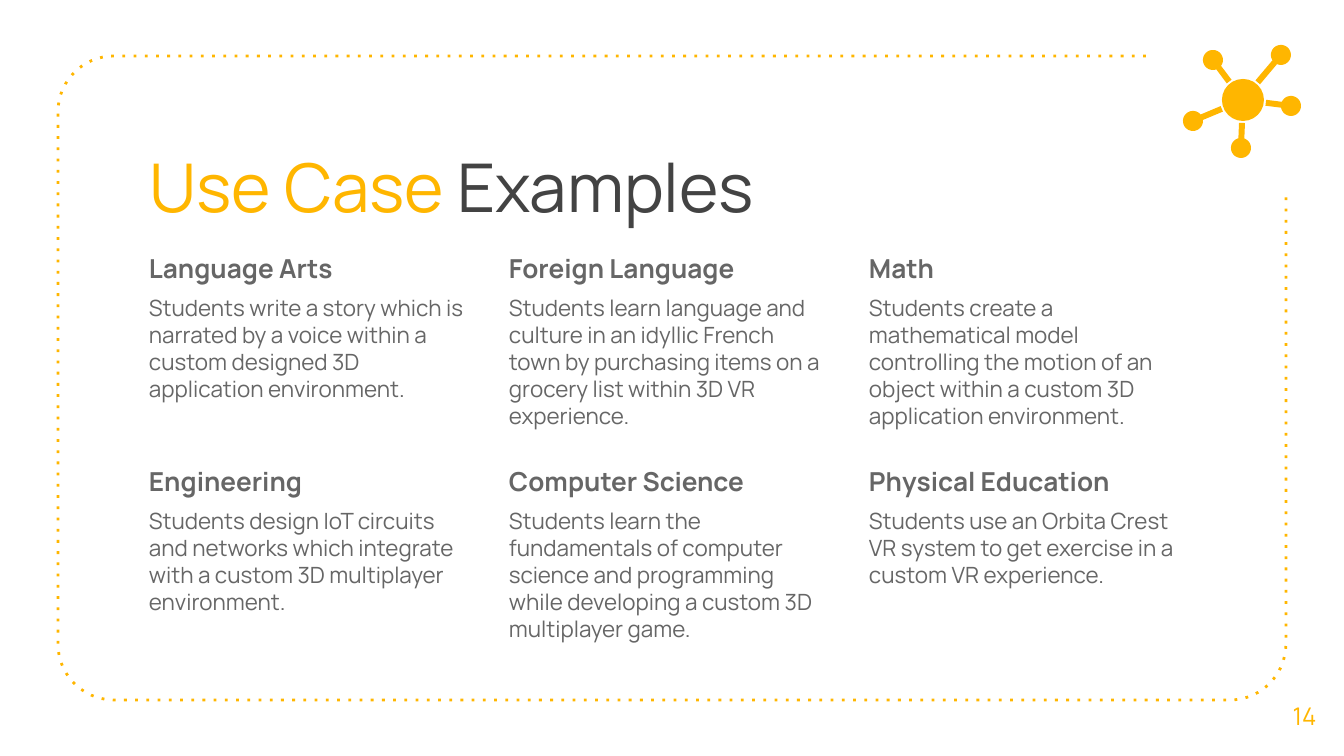
from math import atan2, cos, pi, radians, sin

from pptx import Presentation
from pptx.dml.color import RGBColor
from pptx.enum.dml import MSO_LINE
from pptx.enum.shapes import MSO_SHAPE
from pptx.enum.text import MSO_ANCHOR, MSO_AUTO_SIZE, PP_ALIGN
from pptx.oxml.ns import qn
from pptx.util import Pt

TOP, MID = MSO_ANCHOR.TOP, MSO_ANCHOR.MIDDLE
LEFT, CENTER = PP_ALIGN.LEFT, PP_ALIGN.CENTER
OVAL, DOT, FIXED = MSO_SHAPE.OVAL, MSO_LINE.ROUND_DOT, MSO_AUTO_SIZE.NONE
PX = 914400 / 134.4
GOLD, DARK, GRAY = "FFB600", "434343", "666666"


def color(fmt, code):
    fmt.rgb = RGBColor.from_string(code)


def write(box, paras, anchor=TOP, align=LEFT):
    """Each paragraph is a list of runs: (text, size, color, bold)."""
    frame = box.text_frame
    pad = round(13 * PX)
    form = dict(word_wrap=True, auto_size=FIXED, vertical_anchor=anchor,
                margin_left=pad, margin_right=pad,
                margin_top=pad, margin_bottom=pad)
    for key, val in form.items():
        setattr(frame, key, val)
    for i, runs in enumerate(paras):
        para = frame.add_paragraph() if i else frame.paragraphs[0]
        para.alignment = align
        para.space_before = Pt(6 if i else 0)
        for text, size, code, bold in runs:
            run = para.add_run()
            run.text = text
            for key, val in dict(name="Manrope", size=Pt(size), bold=bold).items():
                setattr(run.font, key, val)
            color(run.font.color, code)


prs = Presentation()
prs.slide_width, prs.slide_height = round(1344 * PX), round(756 * PX)
slide = prs.slides.add_slide(prs.slide_layouts[5])
shapes = slide.shapes

# Dotted frame, open at the top right corner
rad = 56
edge = [(1146, 56)]
for x, y, start in ((114, 112, 270), (114, 644, 180), (1230, 644, 90)):
    for turn in range(0, 91, 6):
        ang = radians(start - turn)
        edge.append((x + rad * cos(ang), y + rad * sin(ang)))
edge.append((1286, 196))
pts = [(x * PX, y * PX) for x, y in edge]
pen = shapes.build_freeform(*pts[0])
pen.add_line_segments(pts[1:], close=False)
border = pen.convert_to_shape()
border.shadow.inherit = False
border.fill.background()
color(border.line.color, GOLD) if border.line.fill.solid() else None
color(border.line.color, GOLD)
border.line.width = Pt(1.5)
border.line.dash_style = DOT
border._element.find(".//" + qn("a:prstDash")).set("val", "dot")

# Title
title = shapes.title
spot = dict(left=136, top=132, width=1009, height=126)
for key, val in spot.items():
    setattr(title, key, round(val * PX))
write(title, [[("Use Case", 36, GOLD, False), (" Examples", 36, DARK, False)]])

# Use cases, three to a row
cases = [
    ("Language Arts", "Students write a story which is narrated by a voice "
     "within a custom designed 3D application environment."),
    ("Foreign Language", "Students learn language and culture in an idyllic French "
     "town by purchasing items on a grocery list within 3D VR experience."),
    ("Math", "Students create a mathematical model controlling the motion of an "
     "object within a custom 3D application environment."),
    ("Engineering", "Students design IoT circuits and networks which integrate "
     "with a custom 3D multiplayer environment."),
    ("Computer Science", "Students learn the fundamentals of computer science and "
     "programming while developing a custom 3D multiplayer game."),
    ("Physical Education", "Students use an Orbita Crest VR system to get exercise "
     "in a custom VR experience."),
]
for i, (head, body) in enumerate(cases):
    row, col = divmod(i, 3)
    area = (136 + 360 * col, 239 + 213 * row, 343, 218)
    box = shapes.add_textbox(*[round(n * PX) for n in area])
    write(box, [[(head, 14, GRAY, True)], [(body, 12, GRAY, False)]])

# Page number
box = shapes.add_textbox(*[round(n * PX) for n in (1265, 675, 79, 81)])
write(box, [[("14", 13, GOLD, False)]], MID, CENTER)

# Network icon: round nodes with stems that stop short of the hub
hub_x, hub_y, hub_r, gap, node_r, half = 1243, 100, 21, 2, 10, 3
icon = []
for x, y in ((1281, 55), (1213, 60), (1193, 121), (1241, 148), (1291, 106)):
    aim = atan2(hub_y - y, hub_x - x)
    open_ang = half / node_r
    step = 2 * (pi - open_ang) / 40
    edge = []
    for k in range(41):
        ang = aim + open_ang + k * step
        edge.append((x + node_r * cos(ang), y + node_r * sin(ang)))
    far = hub_r + gap
    for side in (half, -half):
        edge.append((hub_x - far * cos(aim) + side * sin(aim),
                     hub_y - far * sin(aim) - side * cos(aim)))
    pts = [(px * PX, py * PX) for px, py in edge]
    pen = shapes.build_freeform(*pts[0])
    pen.add_line_segments(pts[1:], close=True)
    icon.append(pen.convert_to_shape())
area = (hub_x - hub_r, hub_y - hub_r, 2 * hub_r, 2 * hub_r)
icon.append(shapes.add_shape(OVAL, *[round(n * PX) for n in area]))
for part in icon:
    part.shadow.inherit = False
    part.fill.solid()
    color(part.fill.fore_color, GOLD)
    part.line.fill.background()

prs.save("out.pptx")
